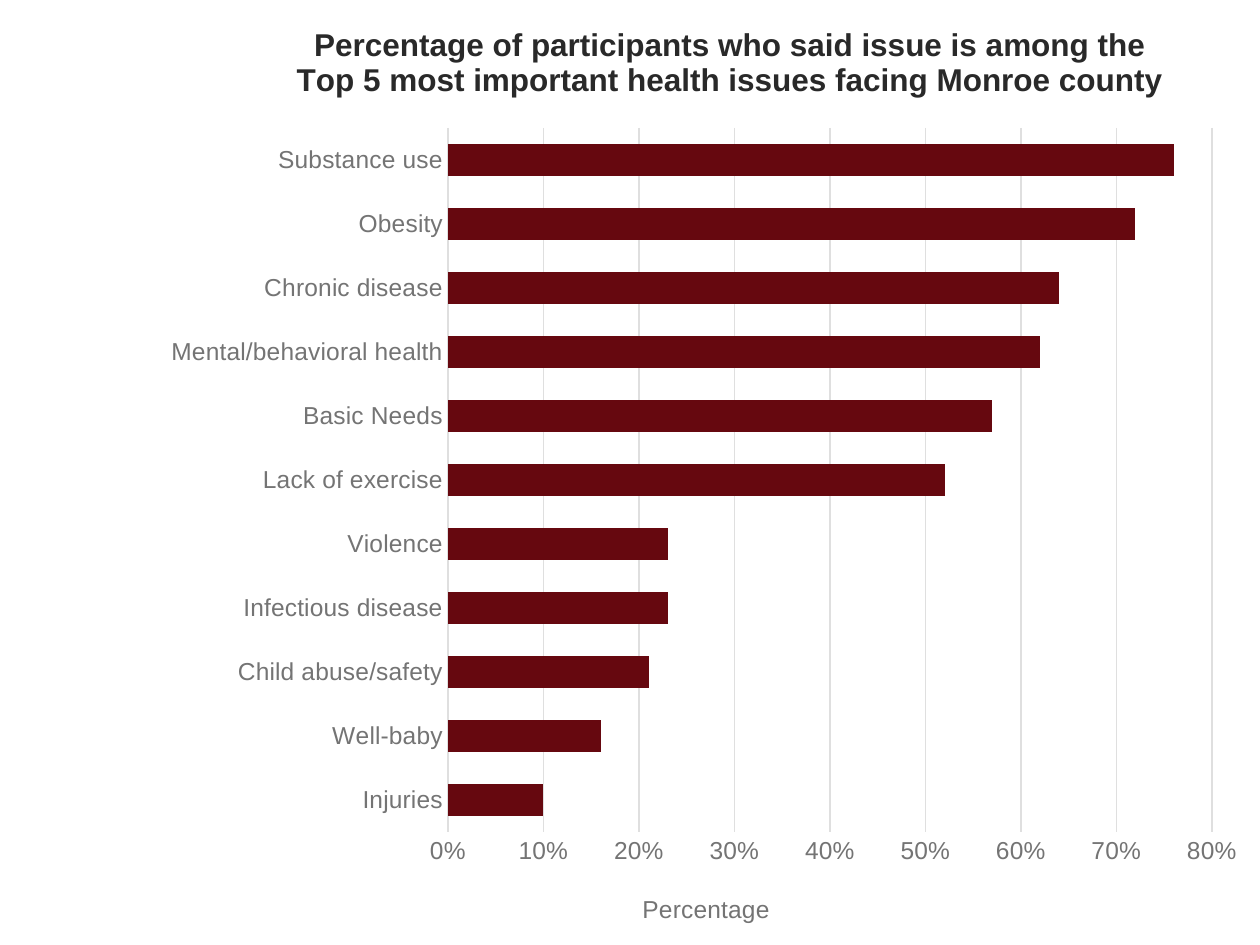
"""Build a slide with a bar chart of the health issues participants ranked highest."""
from lxml.etree import SubElement
from pptx import Presentation
from pptx.chart.data import CategoryChartData
from pptx.dml.color import RGBColor
from pptx.enum.chart import XL_CHART_TYPE as ChartType, XL_TICK_MARK as TickMark
from pptx.oxml.ns import qn
from pptx.util import Emu, Pt

PX = 914400 / 126
CHART_LEFT, CHART_WIDTH, CHART_HEIGHT = 149, 1111, 945
MAROON = RGBColor(0x66, 0x08, 0x0F)
DARK = RGBColor(0x29, 0x29, 0x29)
GRAY = RGBColor(0x74, 0x74, 0x74)
LIGHT = RGBColor(0xDF, 0xDF, 0xDF)
TITLE = ("Percentage of participants who said issue is among the "
         "Top 5 most important health issues facing Monroe county")
ISSUES = {
    "Injuries": 0.10,
    "Well-baby": 0.16,
    "Child abuse/safety": 0.21,
    "Infectious disease": 0.23,
    "Violence": 0.23,
    "Lack of exercise": 0.52,
    "Basic Needs": 0.57,
    "Mental/behavioral health": 0.62,
    "Chronic disease": 0.64,
    "Obesity": 0.72,
    "Substance use": 0.76,
}


def px(length):
    """Turn pixels into EMU."""
    return Emu(round(length * PX))


def set_font(font, size, color, bold=False):
    """Format a font in Arial."""
    font.name, font.size, font.bold = "Arial", Pt(size), bold
    font.color.rgb = color


def set_line(line, color):
    """Give a line the thin axis style."""
    line.color.rgb = color
    line.width = Pt(0.75)


def place(element, left, top, width=None, height=None):
    """Place a chart part at slide pixels, by its inner area if it has a size."""
    for old in element.findall(qn("c:layout")):
        element.remove(old)
    layout = SubElement(element, qn("c:layout"))
    element.insert(0 if element.find(qn("c:tx")) is None else 1, layout)
    manual = SubElement(layout, qn("c:manualLayout"))
    settings = {"xMode": "edge", "yMode": "edge",
                "x": (left - CHART_LEFT) / CHART_WIDTH, "y": top / CHART_HEIGHT}
    if width:
        settings = {"layoutTarget": "inner", **settings,
                    "w": width / CHART_WIDTH, "h": height / CHART_HEIGHT}
    for name, value in settings.items():
        SubElement(manual, qn(f"c:{name}")).set("val", str(value))


def set_title(title, text, left, top, size, color, bold=False):
    """Write, format and place a chart or axis title."""
    title.text_frame.text = text
    for run in title.text_frame.paragraphs[0].runs:
        set_font(run.font, size, color, bold)
    place(title._element, left, top)


def style_axes(chart):
    """Format the category and percentage axes."""
    for axis in (chart.category_axis, chart.value_axis):
        axis.major_tick_mark = axis.minor_tick_mark = TickMark.NONE
        set_font(axis.tick_labels.font, 14, GRAY)
    set_line(chart.category_axis.format.line, LIGHT)
    percent = chart.value_axis
    percent.minimum_scale, percent.maximum_scale, percent.major_unit = 0, 0.8, 0.1
    percent.tick_labels.number_format = "0%"
    percent.tick_labels.number_format_is_linked = False
    percent.format.line.fill.background()
    set_line(percent.major_gridlines.format.line, LIGHT)
    set_title(percent.axis_title, "Percentage", 638, 889, 14, GRAY)


def add_issue_chart(slide):
    """Add the bar chart of health issues."""
    data = CategoryChartData(number_format="0%")
    data.categories = list(ISSUES)
    data.add_series("Series 1", list(ISSUES.values()))
    chart = slide.shapes.add_chart(
        ChartType.BAR_CLUSTERED, px(CHART_LEFT), 0,
        px(CHART_WIDTH), px(CHART_HEIGHT), data).chart
    set_font(chart.font, 10, DARK)
    chart.has_legend = False
    set_title(chart.chart_title, TITLE, 291, 18, 18, DARK, bold=True)
    style_axes(chart)
    plot = chart.plots[0]
    plot.gap_width = 100
    plot.vary_by_categories = False
    fill = plot.series[0].format.fill
    fill.solid()
    fill.fore_color.rgb = MAROON
    place(chart._chartSpace.chart.plotArea, 448, 128, 764, 704)


def main():
    """Build and save the presentation."""
    presentation = Presentation()
    presentation.slide_width, presentation.slide_height = px(1260), px(945)
    slide = presentation.slides.add_slide(presentation.slide_layouts[6])
    add_issue_chart(slide)
    presentation.save("out.pptx")


if __name__ == "__main__":
    main()
